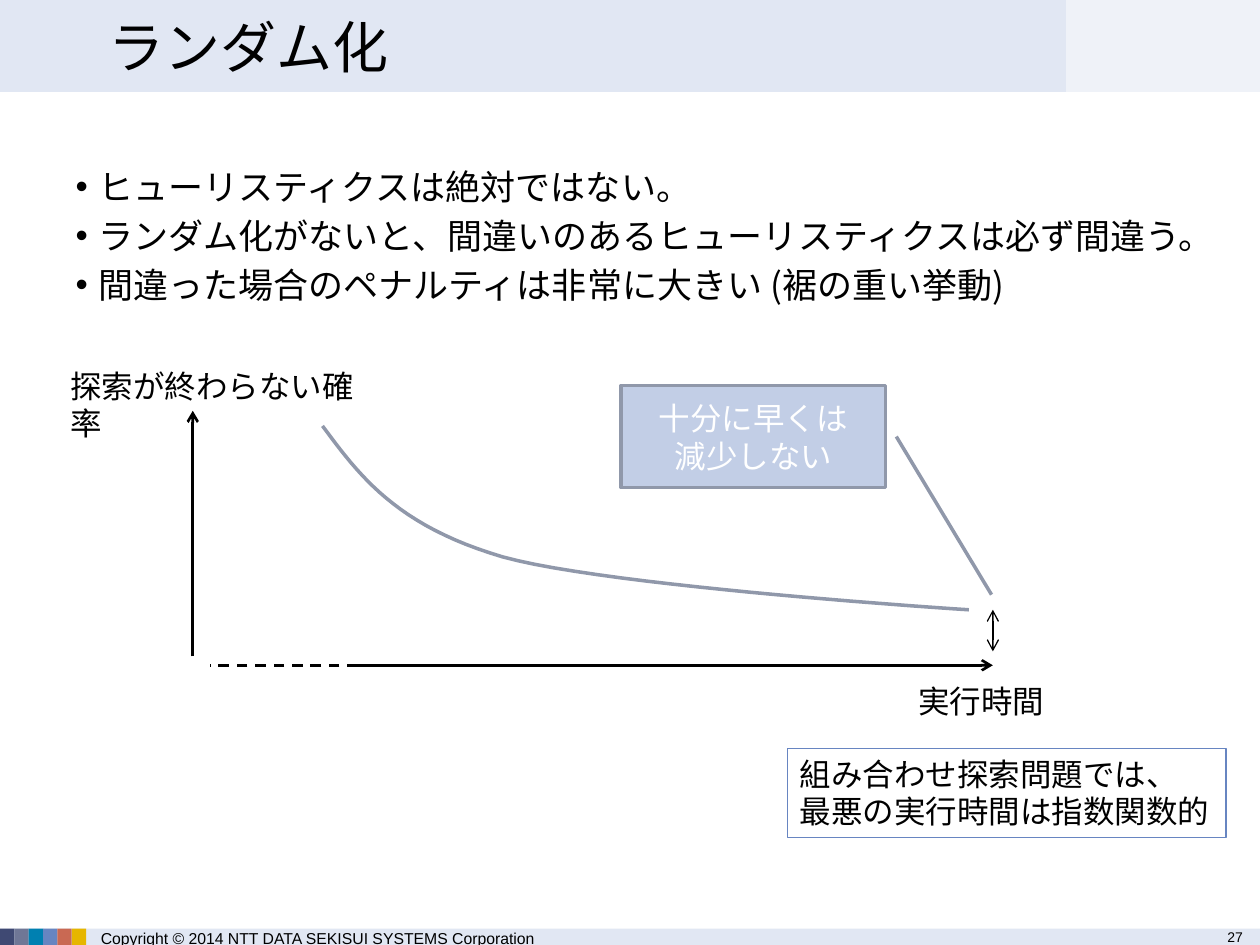
"""Build the slide on randomization and heavy-tailed search behaviour."""
from dataclasses import dataclass
from typing import Optional

from lxml import etree
from pptx import Presentation
from pptx.dml.color import RGBColor
from pptx.enum.dml import MSO_LINE
from pptx.enum.shapes import MSO_CONNECTOR, MSO_SHAPE
from pptx.enum.text import MSO_ANCHOR, MSO_AUTO_SIZE, PP_ALIGN
from pptx.oxml.ns import qn
from pptx.util import Inches, Pt

RECTANGLE, CALLOUT = MSO_SHAPE.RECTANGLE, MSO_SHAPE.LINE_CALLOUT_1
STRAIGHT, DASH = MSO_CONNECTOR.STRAIGHT, MSO_LINE.DASH
LEFT, CENTER = PP_ALIGN.LEFT, PP_ALIGN.CENTER
TOP, MIDDLE = MSO_ANCHOR.TOP, MSO_ANCHOR.MIDDLE
FIXED = MSO_AUTO_SIZE.NONE

BLACK = RGBColor(0x00, 0x00, 0x00)
WHITE = RGBColor(0xFF, 0xFF, 0xFF)
PALE = RGBColor(0xE1, 0xE7, 0xF3)
LIGHT_BLUE = RGBColor(0xC2, 0xCE, 0xE6)
GRAY = RGBColor(0x90, 0x98, 0xAA)
BLUE = RGBColor(0x67, 0x85, 0xC1)
STRIPE_COLORS = (
    RGBColor(0x3F, 0x49, 0x73), RGBColor(0x6F, 0x77, 0x96), RGBColor(0x00, 0x80, 0xB1),
    BLUE, RGBColor(0xC9, 0x69, 0x53), RGBColor(0xE6, 0xB6, 0x00),
)
JAPANESE, LATIN = "Noto Sans CJK JP", "Arial"
WIDTH, HEIGHT = Inches(10), Inches(7.5)
FOOTER_TOP, FOOTER_HEIGHT, STRIPE = 98.27, 1.73, 1.14
HEADER_HEIGHT, HEADER_SPLIT = 9.73, 84.6
AXIS_Y, AXIS_END = 70.4, 78.8
BULLETS = (
    "ヒューリスティクスは絶対ではない。",
    "ランダム化がないと、間違いのあるヒューリスティクスは必ず間違う。",
    "間違った場合のペナルティは非常に大きい (裾の重い挙動)",
)
CURVE = (
    ((25.6, 45.07), (28.5, 50.27), (31.4, 55.6), (39.9, 58.93)),
    ((39.9, 58.93), (48.5, 62.13), (76.9, 64.53), (76.9, 64.53)),
)
CURVE_STEPS = 24


@dataclass(frozen=True)
class Area:
    """Rectangle in percent of the slide's width and height."""
    left: float
    top: float
    width: float
    height: float

    def lengths(self) -> tuple:
        """Return left, top, width and height as slide lengths."""
        return (*point(self.left, self.top), *point(self.width, self.height))


@dataclass(frozen=True)
class Line:
    """Straight line between two points in percent of the slide."""
    start: tuple
    end: tuple
    weight: float = 1.5
    dashed: bool = False
    arrows: tuple = ()


LINES = (
    Line((28.4, AXIS_Y), (AXIS_END, AXIS_Y), arrows=("tailEnd",)),
    Line((28.4, AXIS_Y), (16.7, AXIS_Y), dashed=True),
    Line((15.3, 69.47), (15.3, 43.47), arrows=("tailEnd",)),
    Line((AXIS_END, 64.53), (AXIS_END, 68.93), 0.75, arrows=("headEnd", "tailEnd")),
)


def point(x: float, y: float) -> tuple:
    """Turn percentages into slide lengths."""
    return round(WIDTH * x / 100), round(HEIGHT * y / 100)


def write(box, *texts: str, size: float = 18, font: str = LATIN, color: RGBColor = BLACK,
          align=LEFT, anchor=TOP, margins: tuple = (0.1, 0.05), wrap: bool = True,
          bullet: Optional[str] = None, gap: float = 0) -> None:
    """Fill a box with one formatted paragraph for each text."""
    frame = box.text_frame
    frame.auto_size, frame.word_wrap, frame.vertical_anchor = FIXED, wrap, anchor
    frame.margin_left = frame.margin_right = Inches(margins[0])
    frame.margin_top = frame.margin_bottom = Inches(margins[1])
    for index, text in enumerate(texts):
        para = frame.add_paragraph() if index else frame.paragraphs[0]
        para.alignment = align
        para.space_before = Pt(gap if index else 0)
        if bullet:
            properties = para._p.get_or_add_pPr()
            properties.set("marL", str(Inches(0.18)))
            properties.set("indent", str(-Inches(0.18)))
            etree.SubElement(properties, qn("a:buChar"), char=bullet)
        span = para.add_run()
        span.text = text
        span.font.size, span.font.name = Pt(size), font
        span.font.color.rgb = color
        etree.SubElement(span.font._element, qn("a:ea"), typeface=JAPANESE)


def add_box(page, area: Area, fill: Optional[RGBColor] = None,
            outline: Optional[RGBColor] = None, weight: float = 0.75,
            kind=RECTANGLE, opacity: Optional[int] = None):
    """Add a preset shape with an optional fill and outline."""
    box = page.shapes.add_shape(kind, *area.lengths())
    box.shadow.inherit = False
    if fill is None:
        box.fill.background()
    else:
        box.fill.solid()
        box.fill.fore_color.rgb = fill
    if opacity is not None:
        color = box.element.spPr.find(qn("a:solidFill")).find(qn("a:srgbClr"))
        etree.SubElement(color, qn("a:alpha"), val=str(opacity * 1000))
    if outline is None:
        box.line.fill.background()
    else:
        box.line.color.rgb, box.line.width = outline, Pt(weight)
    return box


def add_label(page, area: Area, text: str, **text_format) -> None:
    """Add a plain text box."""
    write(page.shapes.add_textbox(*area.lengths()), text, **text_format)


def add_line(page, line: Line) -> None:
    """Add a straight connector with its dash and arrowheads."""
    connector = page.shapes.add_connector(STRAIGHT, *point(*line.start), *point(*line.end))
    connector.line.color.rgb, connector.line.width = BLACK, Pt(line.weight)
    if line.dashed:
        connector.line.dash_style = DASH
    properties = connector.element.spPr
    for end in line.arrows:
        etree.SubElement(properties.find(qn("a:ln")), qn(f"a:{end}"), type="arrow")
    etree.SubElement(properties, qn("a:effectLst"))


def bezier(controls: tuple, t: float) -> tuple:
    """Return the point at share t of a cubic Bézier segment."""
    weights = ((1 - t) ** 3, 3 * t * (1 - t) ** 2, 3 * t ** 2 * (1 - t), t ** 3)
    return tuple(sum(w * c for w, c in zip(weights, axis)) for axis in zip(*controls))


def add_curve(page) -> None:
    """Draw the slowly falling probability curve."""
    points = [point(*bezier(segment, step / CURVE_STEPS))
              for segment in CURVE for step in range(1, CURVE_STEPS + 1)]
    builder = page.shapes.build_freeform(*point(*CURVE[0][0]))
    builder.add_line_segments(points, close=False)
    curve = builder.convert_to_shape()
    curve.shadow.inherit = False
    curve.fill.background()
    curve.line.color.rgb, curve.line.width = GRAY, Pt(2)


def place(holder, area: Area) -> None:
    """Move a placeholder to an area and in front of earlier shapes."""
    holder.left, holder.top, holder.width, holder.height = area.lengths()
    holder.element.getparent().append(holder.element)


def add_frame(page) -> None:
    """Draw the header and footer bands with their texts."""
    add_box(page, Area(0, FOOTER_TOP, 100, FOOTER_HEIGHT), PALE)
    for index, color in enumerate(STRIPE_COLORS):
        add_box(page, Area(index * STRIPE, FOOTER_TOP, STRIPE, FOOTER_HEIGHT), color)
    add_box(page, Area(0, 0, HEADER_SPLIT, HEADER_HEIGHT), PALE)
    add_box(page, Area(HEADER_SPLIT, 0, 100 - HEADER_SPLIT, HEADER_HEIGHT), PALE, opacity=50)
    add_label(page, Area(96.5, FOOTER_TOP, 3.5, 3.6), "27", size=8, margins=(0.09, 0))
    add_label(page, Area(7.1, FOOTER_TOP, 38.9, 2),
              "Copyright © 2014 NTT DATA SEKISUI SYSTEMS Corporation", size=9, margins=(0.09, 0))


def main() -> None:
    """Build and save the deck."""
    deck = Presentation()
    deck.slide_width, deck.slide_height = WIDTH, HEIGHT
    page = deck.slides.add_slide(deck.slide_layouts[1])
    title, body = page.shapes.title, page.placeholders[1]
    add_frame(page)
    place(body, Area(5, 16.8, 90, 72.53))
    write(body, *BULLETS, size=20, font=JAPANESE, bullet="•", gap=4)
    place(title, Area(6.8, 0, 77, HEADER_HEIGHT))
    write(title, "ランダム化", size=32, font=JAPANESE, anchor=MIDDLE, margins=(0.18, 0.05))
    for line in LINES:
        add_line(page, line)
    add_curve(page)
    add_label(page, Area(71.9, 71.47, 12.1, 5.33), "実行時間", wrap=False)
    add_label(page, Area(4.6, 38.13, 26.4, 5.33), "探索が終わらない確率")
    callout = add_box(page, Area(49.3, 40.8, 21, 10.8), LIGHT_BLUE, GRAY, 2, CALLOUT)
    for index, share in enumerate((0.5, 1.04, 2.05, 1.4)):
        callout.adjustments[index] = share
    write(callout, "十分に早くは", "減少しない", font=JAPANESE, color=WHITE,
          align=CENTER, anchor=MIDDLE)
    note = add_box(page, Area(62.5, 79.2, 34.8, 9.47), outline=BLUE)
    write(note, "組み合わせ探索問題では、", "最悪の実行時間は指数関数的")
    deck.save("out.pptx")


if __name__ == "__main__":
    main()
